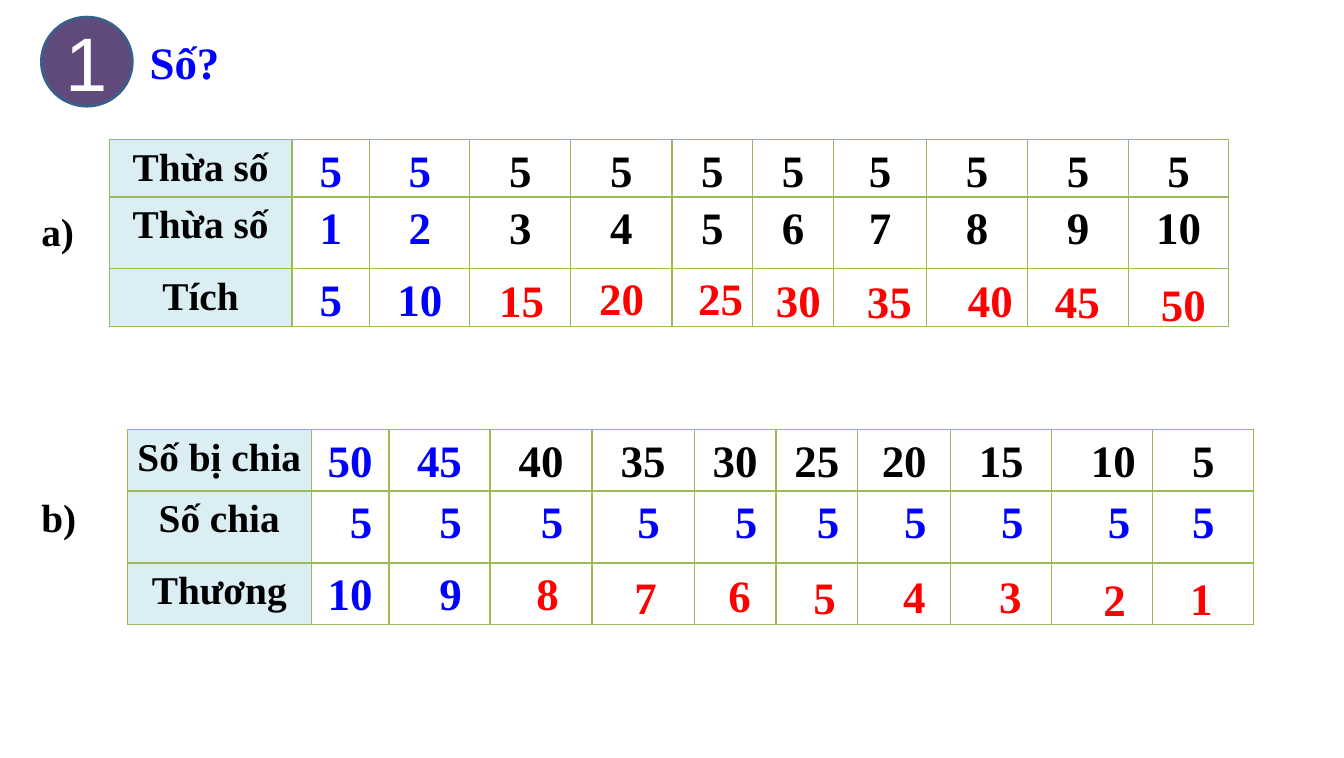
from lxml import etree
from pptx import Presentation
from pptx.dml.color import RGBColor
from pptx.enum.shapes import MSO_SHAPE
from pptx.enum.text import MSO_ANCHOR, MSO_AUTO_SIZE, PP_ALIGN
from pptx.oxml.ns import qn
from pptx.util import Inches, Pt

CENTER, LEFT = PP_ALIGN.CENTER, PP_ALIGN.LEFT
MIDDLE, TOP = MSO_ANCHOR.MIDDLE, MSO_ANCHOR.TOP
FIT_SHAPE = MSO_AUTO_SIZE.SHAPE_TO_FIT_TEXT
OVAL = MSO_SHAPE.OVAL
SERIF = "Times New Roman"
BLUE, BLACK, RED, WHITE = "0000FF", "000000", "FF0000", "FFFFFF"
GREEN, PALE_BLUE = "9BBB59", "DBEEF4"
SPACE = 0.11


def color(value):
    return RGBColor.from_string(value)


def write(text_frame, text, size, text_color, alignment=LEFT, font_name=SERIF, bold=True):
    text_frame.text = text
    paragraph = text_frame.paragraphs[0]
    paragraph.alignment = alignment
    font = paragraph.runs[0].font
    font.name = font_name
    font.size = Pt(size)
    font.bold = bold
    font.color.rgb = color(text_color)


presentation = Presentation()
presentation.slide_width = Inches(13.3)
presentation.slide_height = Inches(7.5)
slide = presentation.slides.add_slide(presentation.slide_layouts[5])

title = slide.shapes.title
title.left, title.top = Inches(1.38), Inches(0.29)
title.width, title.height = Inches(5.86), Inches(0.64)
write(title.text_frame, "Số?", 32, BLUE)
title.text_frame.vertical_anchor = TOP

tables = [
    {
        "left": 1.08, "top": 1.38,
        "columns": [1.81, 0.77, 0.99, 1, 1, 0.8, 0.8, 0.92, 1, 1, 0.99],
        "heights": [0.57, 0.71, 0.57],
        "rows": [
            ["Thừa số"] + ["5"] * 10,
            ["Thừa số"] + [str(number) for number in range(1, 11)],
            ["Tích", "5", "10"],
        ],
        "blue_columns": [2, 2, 2],
        "indents": {},
    },
    {
        "left": 1.26, "top": 4.25,
        "columns": [1.82, 0.77, 1, 1.01, 1.01, 0.81, 0.81, 0.92, 1, 1, 1],
        "heights": [0.61, 0.71, 0.61],
        "rows": [
            ["Số bị chia"] + [str(number) for number in range(50, 0, -5)],
            ["Số chia"] + ["5"] * 10,
            ["Thương", "10", "9"],
        ],
        "blue_columns": [2, 10, 2],
        "indents": {(0, 9): 2, (1, 1): 2, (1, 2): 2, (1, 3): 2, (1, 4): 1, (1, 5): 2,
                    (1, 6): 2, (1, 7): 2, (1, 8): 2, (1, 9): 3, (2, 2): 2},
    },
]

for data in tables:
    table = slide.shapes.add_table(
        3, 11, Inches(data["left"]), Inches(data["top"]),
        Inches(sum(data["columns"])), Inches(sum(data["heights"]))).table
    table.first_row = False
    table.horz_banding = False
    for column, width in zip(table.columns, data["columns"]):
        column.width = Inches(width)
    for row_index, height in enumerate(data["heights"]):
        table.rows[row_index].height = Inches(height)
        texts = data["rows"][row_index]
        for column_index in range(11):
            cell = table.cell(row_index, column_index)
            indent = data["indents"].get((row_index, column_index), 0)
            cell.margin_left = Inches(0.07 + indent * SPACE)
            cell.margin_right = Inches(0.07)
            cell.margin_top = cell.margin_bottom = 0
            properties = cell._tc.get_or_add_tcPr()
            for side in ("L", "R", "T", "B"):
                heavy = (row_index, side) in ((0, "B"), (1, "T"))
                border = etree.SubElement(properties, qn(f"a:ln{side}"), w=str(Pt(2 if heavy else 1)))
                border_fill = etree.SubElement(border, qn("a:solidFill"))
                etree.SubElement(border_fill, qn("a:srgbClr"), val=GREEN)
            cell.fill.solid()
            cell.fill.fore_color.rgb = color(WHITE if column_index else PALE_BLUE)
            if column_index < len(texts):
                is_blue = 0 < column_index <= data["blue_columns"][row_index]
                write(cell.text_frame, texts[column_index], 32 if column_index else 28,
                      BLUE if is_blue else BLACK, CENTER)
                cell.text_frame.paragraphs[0].line_spacing = 1.15

badge = slide.shapes.add_shape(OVAL, Inches(0.41), Inches(0.17), Inches(0.9), Inches(0.88))
badge.shadow.inherit = False
badge.fill.solid()
badge.fill.fore_color.rgb = color("604A7B")
badge.line.color.rgb = color("3A5F8C")
badge.line.width = Pt(2)
write(badge.text_frame, "1", 54, WHITE, CENTER, "Arial", False)
badge.text_frame.vertical_anchor = MIDDLE

products = [("15", 4.84, 2.65), ("20", 5.83, 2.63), ("25", 6.81, 2.63), ("30", 7.58, 2.65),
            ("35", 8.48, 2.66), ("40", 9.48, 2.65), ("45", 10.34, 2.66), ("50", 11.39, 2.69)]
quotients = [("8", 5.21, 5.55), ("7", 6.18, 5.59), ("6", 7.11, 5.57), ("5", 7.95, 5.59),
             ("4", 8.84, 5.58), ("3", 9.79, 5.58), ("2", 10.82, 5.61), ("1", 11.68, 5.6)]
part_labels = [("a)", 0.31, 2), ("b)", 0.31, 4.83)]

for labels, width, height, size, text_color in (
        (products, 0.65, 0.64, 32, RED),
        (quotients, 0.43, 0.64, 32, RED),
        (part_labels, 0.55, 0.57, 28, BLACK)):
    for text, left, top in labels:
        box = slide.shapes.add_textbox(Inches(left), Inches(top), Inches(width), Inches(height))
        box.text_frame.word_wrap = False
        box.text_frame.auto_size = FIT_SHAPE
        write(box.text_frame, text, size, text_color)

presentation.save("out.pptx")
